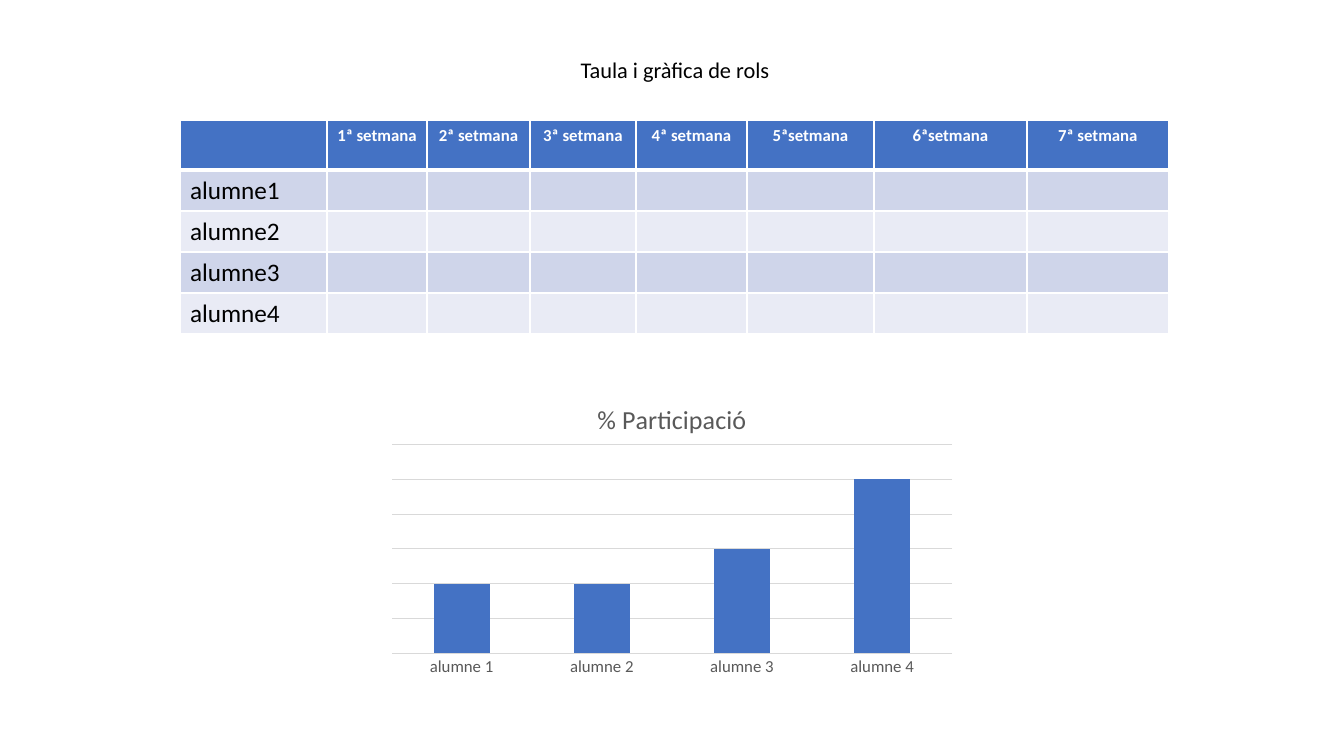
import dataclasses

import lxml.etree
import pptx
import pptx.chart.data
import pptx.dml.color
import pptx.enum.chart
import pptx.enum.text
import pptx.oxml
import pptx.oxml.ns
import pptx.util

PX = 914400 / 100.8
CENTER = pptx.enum.text.PP_ALIGN.CENTER
LEFT = pptx.enum.text.PP_ALIGN.LEFT


@dataclasses.dataclass(frozen=True)
class Theme:
    """Hold the colours and type sizes of the slide."""
    font: str = "Calibri"
    black: str = "000000"
    white: str = "FFFFFF"
    accent: str = "4472C4"
    bands: tuple = ("CFD5EA", "E9EBF5")
    muted: str = "595959"
    grid: str = "D9D9D9"
    heading: float = 16
    header: float = 12
    body: float = 18
    chart_title: float = 18.6
    axis: float = 12


THEME = Theme()


def px(length):
    """Turn px into EMU."""
    return pptx.util.Emu(round(length * PX))


def rgb(color):
    """Turn a hex string into a colour."""
    return pptx.dml.color.RGBColor.from_string(color)


def format_font(font, size, color, bold=False):
    """Apply the theme font with a size and colour."""
    font.name = THEME.font
    font.size = pptx.util.Pt(size)
    font.bold = bold
    font.color.rgb = rgb(color)


def write_text(frame, text, size, color=THEME.black, bold=False, align=LEFT, spacing=None):
    """Write one formatted paragraph into a text frame."""
    paragraph = frame.paragraphs[0]
    paragraph.alignment = align
    paragraph.line_spacing = spacing
    run = paragraph.add_run()
    run.text = text
    format_font(run.font, size, color, bold)


def set_borders(cell, **widths):
    """Draw white cell borders with the given widths in points."""
    properties = cell._tc.get_or_add_tcPr()
    for side in "LRTB":
        width = pptx.util.Pt(widths.get(side, 1))
        properties.append(pptx.oxml.parse_xml(
            f'<a:ln{side} {pptx.oxml.ns.nsdecls("a")} w="{width}"><a:solidFill>'
            f'<a:srgbClr val="{THEME.white}"/></a:solidFill></a:ln{side}>'))


def add_heading(slide, box, text):
    """Place the centred slide heading."""
    frame = slide.shapes.add_textbox(*map(px, box)).text_frame
    frame.word_wrap = True
    write_text(frame, text, THEME.heading, align=CENTER, spacing=0.9)


def add_roles_table(slide, box, widths, header_height, weeks, students):
    """Place the banded table of students by week."""
    table = slide.shapes.add_table(
        len(students) + 1, len(widths), *map(px, box)).table
    for column, width in zip(table.columns, widths):
        column.width = px(width)
    row_height = (box[3] - header_height) / len(students)
    rows = [["", *weeks]] + [[student] + [""] * len(weeks) for student in students]
    for index, texts in enumerate(rows):
        is_header = index == 0
        table.rows[index].height = px(header_height if is_header else row_height)
        for column, text in enumerate(texts):
            cell = table.cell(index, column)
            set_borders(cell, T=3 if index == 1 else 1, B=3 if is_header else 1)
            cell.fill.solid()
            cell.fill.fore_color.rgb = rgb(
                THEME.accent if is_header else THEME.bands[(index - 1) % 2])
            if text and is_header:
                write_text(cell.text_frame, text, THEME.header, color=THEME.white,
                           bold=True, align=CENTER)
            elif text:
                write_text(cell.text_frame, text, THEME.body)


def set_plot_layout(chart, **fractions):
    """Fix the inner plot area as fractions of the chart."""
    plot_area = chart._chartSpace.chart.plotArea
    for layout in plot_area.findall(pptx.oxml.ns.qn("c:layout")):
        plot_area.remove(layout)
    layout = pptx.oxml.parse_xml(
        f'<c:layout {pptx.oxml.ns.nsdecls("c")}><c:manualLayout>'
        '<c:layoutTarget val="inner"/><c:xMode val="edge"/><c:yMode val="edge"/>'
        '</c:manualLayout></c:layout>')
    for name, value in fractions.items():
        lxml.etree.SubElement(layout[0], pptx.oxml.ns.qn(f"c:{name}")).set("val", str(value))
    plot_area.insert(0, layout)


def add_participation_chart(slide, box, title, categories, values):
    """Place the column chart of participation."""
    data = pptx.chart.data.CategoryChartData()
    data.categories = categories
    data.add_series("Series 1", values)
    chart = slide.shapes.add_chart(
        pptx.enum.chart.XL_CHART_TYPE.COLUMN_CLUSTERED, *map(px, box), data).chart
    format_font(chart.font, THEME.axis, THEME.muted)
    chart.has_legend = False
    chart.has_title = True
    write_text(chart.chart_title.text_frame, title, THEME.chart_title,
               color=THEME.muted, align=CENTER)
    chart.chart_title.include_in_layout = False
    set_plot_layout(chart, x=0.02, y=0.2, w=0.96, h=0.7)

    plot = chart.plots[0]
    plot.gap_width = 150
    plot.vary_by_categories = False
    fill = plot.series[0].format.fill
    fill.solid()
    fill.fore_color.rgb = rgb(THEME.accent)

    category_axis = chart.category_axis
    category_axis.major_tick_mark = pptx.enum.chart.XL_TICK_MARK.NONE
    category_axis.format.line.fill.background()
    format_font(category_axis.tick_labels.font, THEME.axis, THEME.muted)

    value_axis = chart.value_axis
    value_axis.visible = False
    value_axis.minimum_scale = 0
    value_axis.maximum_scale = 120
    value_axis.major_unit = 20
    value_axis.has_major_gridlines = True
    line = value_axis.major_gridlines.format.line
    line.width = pptx.util.Pt(0.75)
    line.color.rgb = rgb(THEME.grid)


def main():
    """Build and save the slide."""
    presentation = pptx.Presentation()
    presentation.slide_width = px(1344)
    presentation.slide_height = px(756)
    slide = presentation.slides.add_slide(presentation.slide_layouts[6])
    add_heading(slide, (0, 54, 1350, 480), "Taula i gràfica de rols")
    add_roles_table(
        slide, (180, 120, 989, 214), (147, 100, 103, 106, 111, 127, 153, 142), 50,
        ["1ª setmana", "2ª setmana", "3ª setmana", "4ª setmana",
         "5ªsetmana", "6ªsetmana", "7ª setmana"],
        [f"alumne{number}" for number in range(1, 5)])
    add_participation_chart(
        slide, (380, 385, 584, 298), "% Participació",
        [f"alumne {number}" for number in range(1, 5)], (40, 40, 60, 100))
    presentation.save("out.pptx")


if __name__ == "__main__":
    main()
